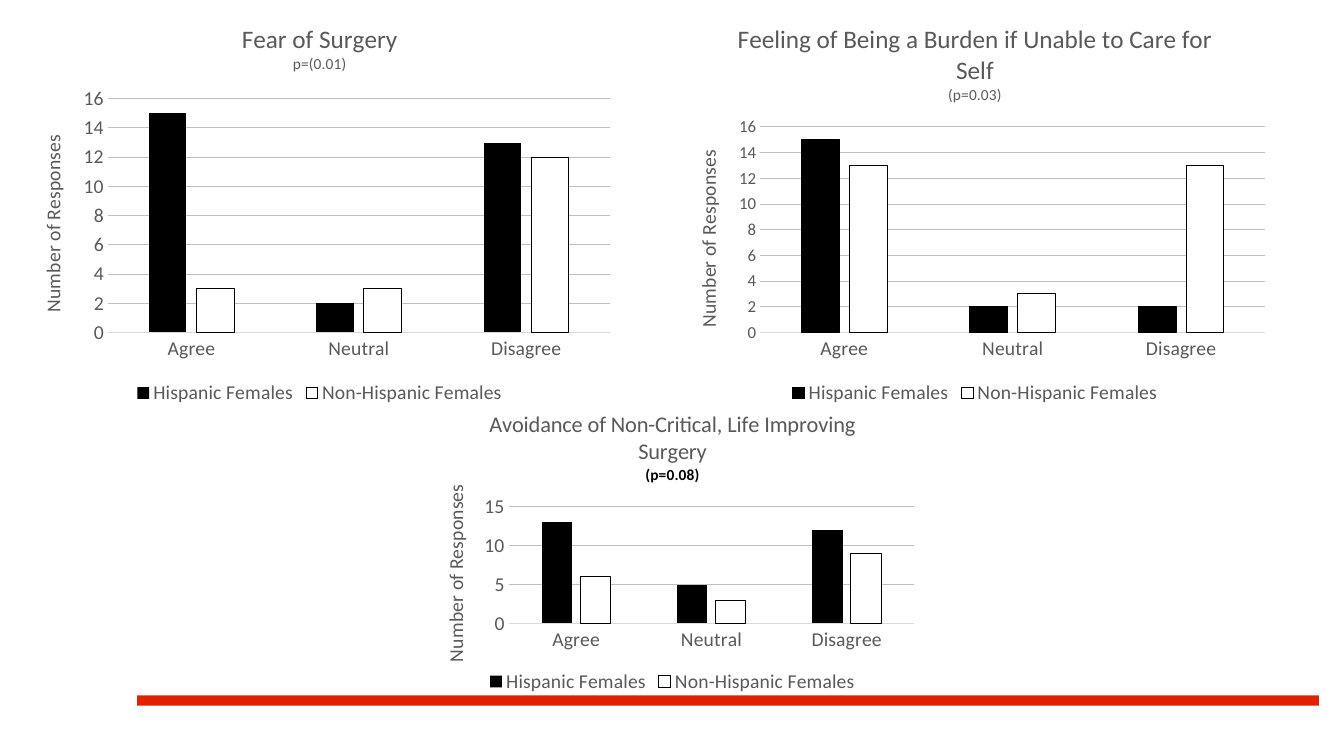
from dataclasses import dataclass

from pptx import Presentation
from pptx import chart as chart_package
from pptx import util as u
from pptx.chart import data as chart_data
from pptx.dml import color, line
from pptx.enum import chart as chart_enum, shapes
from pptx.oxml import parse_xml
from pptx.oxml import ns
from pptx.slide import Slide
from pptx.text import text


@dataclass(frozen=True)
class Theme:
    font: str = "Calibri"
    black: str = "000000"
    white: str = "FFFFFF"
    gray: str = "595959"
    grid: str = "BFBFBF"
    axis: str = "D9D9D9"
    red: str = "E11F02"
    label_size: float = 14
    p_value_size: float = 11
    line_width: float = 0.75


@dataclass(frozen=True)
class Box:
    left: float
    top: float
    width: float
    height: float


@dataclass(frozen=True)
class ResponseChart:
    title: str
    p_value: str
    hispanic: tuple[int, ...]
    non_hispanic: tuple[int, ...]
    box: Box
    plot: Box  # fractions of the chart box
    maximum: int
    step: int
    title_size: float = 18
    value_size: float = 14
    bold_p_value: bool = False
    outlined: bool = False


THEME = Theme()
CATEGORIES = ("Agree", "Neutral", "Disagree")
CHARTS = (
    ResponseChart("Fear of Surgery", "p=(0.01)", (15, 2, 13), (3, 3, 12),
                  Box(0.17, 0.06, 6, 4), Box(0.15, 0.23, 0.83, 0.58), 16, 2),
    ResponseChart("Avoidance of Non-Critical, Life Improving Surgery", "(p=0.08)",
                  (13, 5, 12), (6, 3, 9),
                  Box(4.17, 3.92, 5, 3), Box(0.175, 0.37, 0.805, 0.385), 15, 5,
                  title_size=16, bold_p_value=True),
    ResponseChart("Feeling of Being a Burden if Unable to Care for Self", "(p=0.03)",
                  (15, 2, 2), (13, 3, 13),
                  Box(6.67, 0.06, 6, 4), Box(0.145, 0.3, 0.835, 0.51), 16, 2,
                  value_size=12, outlined=True),
)


def inches(box: Box) -> tuple[u.Length, ...]:
    return tuple(u.Inches(n) for n in (box.left, box.top, box.width, box.height))


def style_font(font: text.Font, size: float, rgb: str = THEME.gray, bold: bool = False) -> None:
    font.name = THEME.font
    font.size = u.Pt(size)
    font.bold = bold
    font.color.rgb = color.RGBColor.from_string(rgb)


def style_line(outline: line.LineFormat, rgb: str) -> None:
    outline.width = u.Pt(THEME.line_width)
    outline.fill.solid()
    outline.fill.fore_color.rgb = color.RGBColor.from_string(rgb)


def place_plot(chart: chart_package.chart.Chart, plot: Box) -> None:
    """Fix the inner plot area, leaving room for titles and legend."""
    plot_area = chart._chartSpace.chart.plotArea
    for layout in plot_area.findall(ns.qn("c:layout")):
        plot_area.remove(layout)
    plot_area.insert(0, parse_xml(
        f'<c:layout {ns.nsdecls("c")}><c:manualLayout><c:layoutTarget val="inner"/>'
        '<c:xMode val="edge"/><c:yMode val="edge"/>'
        f'<c:x val="{plot.left}"/><c:y val="{plot.top}"/>'
        f'<c:w val="{plot.width}"/><c:h val="{plot.height}"/>'
        '</c:manualLayout></c:layout>'))


def style_title(chart: chart_package.chart.Chart, item: ResponseChart) -> None:
    chart.has_title = True
    chart.chart_title.include_in_layout = False
    frame = chart.chart_title.text_frame
    frame.text = item.title
    p_value = frame.add_paragraph()
    p_value.text = item.p_value
    style_font(frame.paragraphs[0].runs[0].font, item.title_size)
    style_font(p_value.runs[0].font, THEME.p_value_size,
               THEME.black if item.bold_p_value else THEME.gray, item.bold_p_value)


def style_axes(chart: chart_package.chart.Chart, item: ResponseChart) -> None:
    categories, values = chart.category_axis, chart.value_axis
    for axis, size in ((categories, THEME.label_size), (values, item.value_size)):
        axis.major_tick_mark = axis.minor_tick_mark = chart_enum.XL_TICK_MARK.NONE
        style_font(axis.tick_labels.font, size)
    style_line(categories.format.line, THEME.axis)
    values.format.line.fill.background()
    values.minimum_scale, values.maximum_scale = 0, item.maximum
    values.major_unit = item.step
    values.has_major_gridlines = True
    style_line(values.major_gridlines.format.line, THEME.grid)
    frame = values.axis_title.text_frame
    frame.text = "Number of Responses"
    style_font(frame.paragraphs[0].runs[0].font, THEME.label_size)
    for body in values.axis_title._element.iter(ns.qn("a:bodyPr")):
        body.set("rot", "-5400000")
        body.set("vert", "horz")


def style_bars(chart: chart_package.chart.Chart, item: ResponseChart) -> None:
    plot = chart.plots[0]
    plot.vary_by_categories = False
    plot.gap_width, plot.overlap = 219, -27
    for series, rgb in zip(plot.series, (THEME.black, THEME.white)):
        series.invert_if_negative = False
        series.format.fill.solid()
        series.format.fill.fore_color.rgb = color.RGBColor.from_string(rgb)
        if item.outlined or rgb == THEME.white:
            style_line(series.format.line, THEME.black)
        else:
            series.format.line.fill.background()


def add_response_chart(slide: Slide, item: ResponseChart) -> None:
    responses = chart_data.CategoryChartData()
    responses.categories = CATEGORIES
    responses.add_series("Hispanic Females", item.hispanic)
    responses.add_series("Non-Hispanic Females", item.non_hispanic)
    chart = slide.shapes.add_chart(
        chart_enum.XL_CHART_TYPE.COLUMN_CLUSTERED, *inches(item.box), responses).chart
    style_font(chart.font, 10, THEME.black)
    style_title(chart, item)
    style_axes(chart, item)
    style_bars(chart, item)
    chart.has_legend = True
    chart.legend.position = chart_enum.XL_LEGEND_POSITION.BOTTOM
    chart.legend.include_in_layout = False
    style_font(chart.legend.font, THEME.label_size)
    place_plot(chart, item.plot)


def add_footer_bar(slide: Slide) -> None:
    bar = slide.shapes.add_shape(
        shapes.MSO_SHAPE.RECTANGLE, *inches(Box(1.36, 6.9, 11.72, 0.1)))
    bar.shadow.inherit = False
    bar.fill.solid()
    bar.fill.fore_color.rgb = color.RGBColor.from_string(THEME.red)
    bar.line.fill.background()


def main() -> None:
    presentation = Presentation()
    presentation.slide_width = u.Inches(13.33)
    presentation.slide_height = u.Inches(7.5)
    slide = presentation.slides.add_slide(presentation.slide_layouts[6])
    add_footer_bar(slide)
    for item in CHARTS:
        add_response_chart(slide, item)
    presentation.save("out.pptx")


if __name__ == "__main__":
    main()
